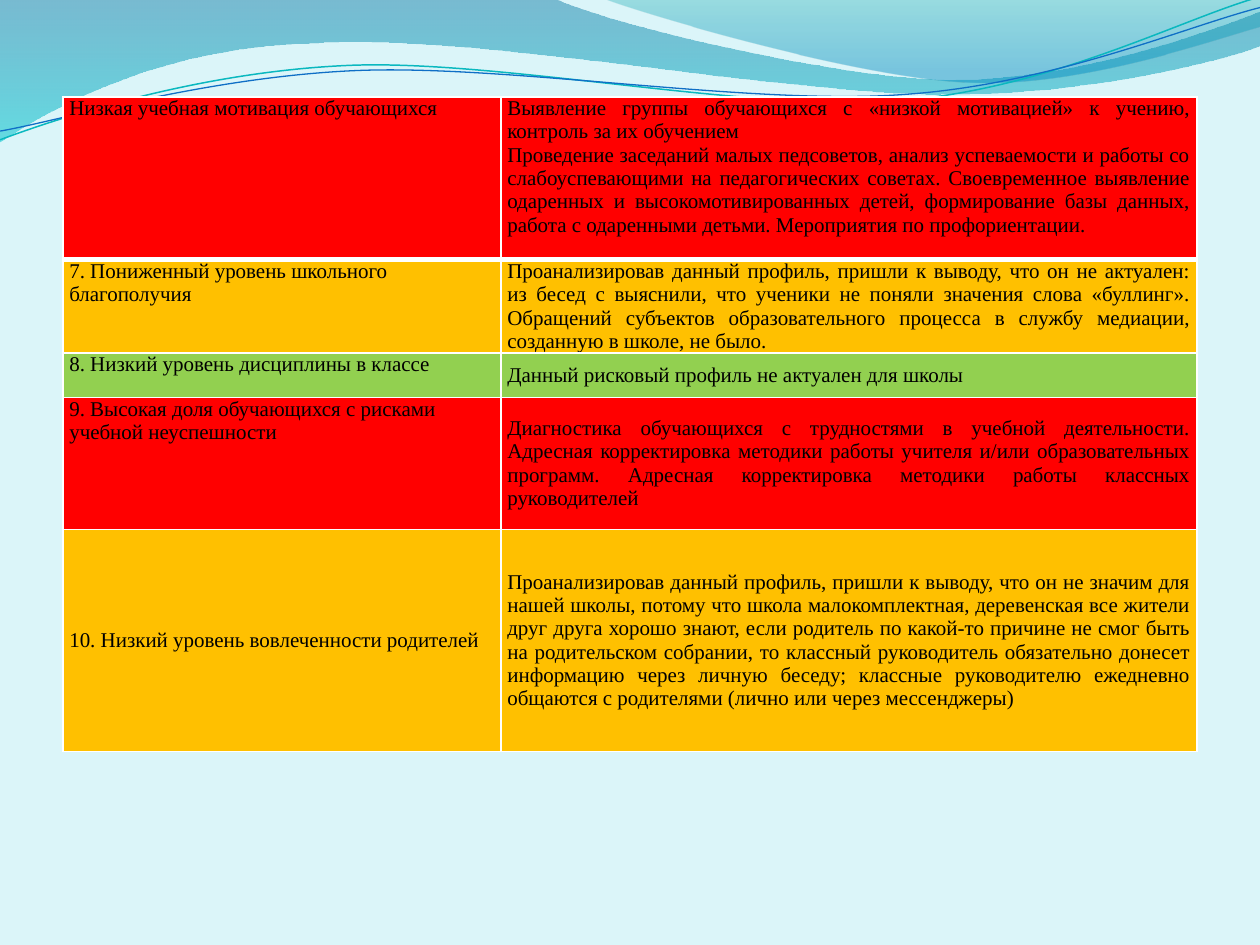
from dataclasses import dataclass
from typing import Optional

from lxml.etree import Element, SubElement
from pptx import Presentation
from pptx.dml.color import RGBColor
from pptx.enum.text import MSO_ANCHOR, PP_ALIGN
from pptx.oxml import parse_xml
from pptx.oxml.ns import nsdecls, qn
from pptx.util import Pt

Point = tuple[float, float]
Segment = tuple[Point, ...]


@dataclass(frozen=True)
class Theme:
    background: str = "DBF5F9"
    border: str = "FFFFFF"
    text: str = "000000"
    high: str = "FF0000"
    medium: str = "FFC000"
    low: str = "92D050"
    font: str = "Times New Roman"
    size: float = 12
    thin: float = 1
    thick: float = 3


@dataclass(frozen=True)
class GradientStop:
    position: int
    color: str
    opacity: int


@dataclass(frozen=True)
class Wave:
    start: Point
    segments: tuple[Segment, ...]
    stops: tuple[GradientStop, ...] = ()
    line_color: Optional[str] = None
    line_width: float = 0


@dataclass(frozen=True)
class RiskRow:
    risk: str
    measures: str
    color: str
    height: float
    risk_anchor: MSO_ANCHOR = MSO_ANCHOR.TOP
    measures_anchor: MSO_ANCHOR = MSO_ANCHOR.MIDDLE


THEME = Theme()
COLUMN_WIDTHS = (250.3, 397.7)

WAVES = (
    Wave(
        (0, 0),
        (
            ((317, -0.7),),
            ((342.7, 12.2), (478.1, 45.4), (545.8, 45.4)),
            ((614.2, 45.4), (689.8, 18.7), (720, 6.5)),
            ((720.7, 25.9),),
            ((707.8, 31.7), (626.4, 54.7), (537.1, 54)),
            ((447.8, 54), (275, 20.2), (185, 24.5)),
            ((92.9, 25.9), (33.1, 59.8), (-0.7, 81.4)),
        ),
        stops=(GradientStop(0, "0074A1", 45), GradientStop(100, "00C6CF", 55)),
    ),
    Wave(
        (344.9, -0.7),
        (
            ((366.5, 7.9), (491, 44.6), (553.7, 46.8)),
            ((616.3, 49.7), (691.9, 23), (720, 15.1)),
            ((720, 0),),
        ),
        stops=(GradientStop(0, "00A1A9", 30), GradientStop(80, "008BBF", 45)),
    ),
    Wave(
        (0, 79.9),
        (
            ((34.6, 67), (113.8, 41), (199.4, 37.4)),
            ((284.4, 33.8), (427, 64.1), (513.4, 57.6)),
            ((599.8, 51.1), (675.4, 10.8), (718.6, -1.4)),
        ),
        line_color="0AB8BF",
        line_width=0.85,
    ),
    Wave(
        (0, 74.9),
        (
            ((33.8, 69.1), (118.1, 43.9), (203.8, 40.3)),
            ((290.2, 36.7), (429.8, 60.5), (516.2, 54)),
            ((601.9, 48.2), (677.5, 15.1), (720, 4.3)),
        ),
        line_color="0F6FC6",
        line_width=0.75,
    ),
)

ROWS = (
    RiskRow(
        "Низкая учебная мотивация обучающихся",
        "Выявление группы обучающихся с «низкой мотивацией» к учению, контроль за их обучением\n"
        "Проведение заседаний малых педсоветов, анализ успеваемости и работы со слабоуспевающими на педагогических советах. Своевременное выявление одаренных и высокомотивированных детей, формирование базы данных, работа с одаренными детьми. Мероприятия по профориентации.",
        THEME.high, 93, measures_anchor=MSO_ANCHOR.TOP,
    ),
    RiskRow(
        "7. Пониженный уровень школьного благополучия",
        "Проанализировав данный профиль, пришли к выводу, что он не актуален: из бесед с выяснили, что ученики не поняли значения слова «буллинг». Обращений субъектов образовательного процесса в службу медиации, созданную в школе, не было.",
        THEME.medium, 53,
    ),
    RiskRow(
        "8. Низкий уровень дисциплины в классе",
        "Данный рисковый профиль не актуален для школы",
        THEME.low, 25.4,
    ),
    RiskRow(
        "9. Высокая доля обучающихся с рисками учебной неуспешности",
        "Диагностика обучающихся с трудностями в учебной деятельности. Адресная корректировка методики работы учителя и/или образовательных программ. Адресная корректировка методики работы классных руководителей",
        THEME.high, 75.6,
    ),
    RiskRow(
        "10. Низкий уровень вовлеченности родителей",
        "Проанализировав данный профиль, пришли к выводу, что он не значим для нашей школы, потому что школа малокомплектная, деревенская все жители друг друга хорошо знают, если родитель по какой-то причине не смог быть на родительском собрании, то классный руководитель обязательно донесет информацию через личную беседу; классные руководителю ежедневно общаются с родителями (лично или через мессенджеры)",
        THEME.medium, 126.7, risk_anchor=MSO_ANCHOR.MIDDLE,
    ),
)


def bend_segments(shape, segments: tuple[Segment, ...]) -> None:
    lines = iter(list(shape.element.iter(qn("a:lnTo"))))
    for segment in segments:
        parts = [next(lines) for _ in segment]
        if len(parts) == 3:
            curve = Element(qn("a:cubicBezTo"))
            parts[0].addprevious(curve)
            for part in parts:
                curve.append(part[0])
                part.getparent().remove(part)


def draw_wave(slide, wave: Wave) -> None:
    builder = slide.shapes.build_freeform(Pt(wave.start[0]), Pt(wave.start[1]))
    places = [(Pt(x), Pt(y)) for segment in wave.segments for x, y in segment]
    builder.add_line_segments(places, close=bool(wave.stops))
    shape = builder.convert_to_shape()
    bend_segments(shape, wave.segments)
    shape.shadow.inherit = False
    shape.fill.background()
    if wave.line_color:
        shape.line.color.rgb = RGBColor.from_string(wave.line_color)
        shape.line.width = Pt(wave.line_width)
    else:
        shape.line.fill.background()
    if wave.stops:
        stops = "".join(
            f'<a:gs pos="{stop.position * 1000}"><a:srgbClr val="{stop.color}">'
            f'<a:alpha val="{stop.opacity * 1000}"/></a:srgbClr></a:gs>'
            for stop in wave.stops
        )
        gradient = parse_xml(
            f'<a:gradFill {nsdecls("a")}><a:gsLst>{stops}</a:gsLst><a:lin ang="5400000" scaled="0"/></a:gradFill>'
        )
        properties = shape.element.spPr
        properties.replace(properties.find(qn("a:noFill")), gradient)


def set_borders(cell, top: float, bottom: float) -> None:
    properties = cell._tc.get_or_add_tcPr()
    for side, width in (("L", THEME.thin), ("R", THEME.thin), ("T", top), ("B", bottom)):
        line = SubElement(properties, qn(f"a:ln{side}"), w=str(Pt(width)))
        fill = SubElement(line, qn("a:solidFill"))
        SubElement(fill, qn("a:srgbClr"), val=THEME.border)


def fill_cell(cell, text: str, color: str, alignment: PP_ALIGN, anchor: MSO_ANCHOR) -> None:
    cell.fill.solid()
    cell.fill.fore_color.rgb = RGBColor.from_string(color)
    cell.margin_left = cell.margin_right = Pt(3.6)
    cell.margin_top = cell.margin_bottom = Pt(0)
    cell.vertical_anchor = anchor
    cell.text_frame.text = text
    for paragraph in cell.text_frame.paragraphs:
        paragraph.alignment = alignment
        for run in paragraph.runs:
            run.font.name = THEME.font
            run.font.size = Pt(THEME.size)
            run.font.color.rgb = RGBColor.from_string(THEME.text)


def draw_risk_table(slide, rows: tuple[RiskRow, ...]) -> None:
    height = sum(row.height for row in rows)
    frame = slide.shapes.add_table(
        len(rows), len(COLUMN_WIDTHS), Pt(36), Pt(55.4), Pt(sum(COLUMN_WIDTHS)), Pt(height)
    )
    table = frame.table
    table.first_row = table.horz_banding = False
    for column, width in zip(table.columns, COLUMN_WIDTHS):
        column.width = Pt(width)
    for index, row in enumerate(rows):
        table.rows[index].height = Pt(row.height)
        risk_cell, measures_cell = table.rows[index].cells
        for cell in (risk_cell, measures_cell):
            set_borders(
                cell,
                top=THEME.thick if index == 1 else THEME.thin,
                bottom=THEME.thick if index == 0 else THEME.thin,
            )
        fill_cell(risk_cell, row.risk, row.color, PP_ALIGN.LEFT, row.risk_anchor)
        fill_cell(measures_cell, row.measures, row.color, PP_ALIGN.JUSTIFY, row.measures_anchor)


def main() -> None:
    presentation = Presentation()
    presentation.slide_width, presentation.slide_height = Pt(720), Pt(540)
    slide = presentation.slides.add_slide(presentation.slide_layouts[6])
    slide.background.fill.solid()
    slide.background.fill.fore_color.rgb = RGBColor.from_string(THEME.background)
    for wave in WAVES:
        draw_wave(slide, wave)
    draw_risk_table(slide, ROWS)
    presentation.save("out.pptx")


if __name__ == "__main__":
    main()
